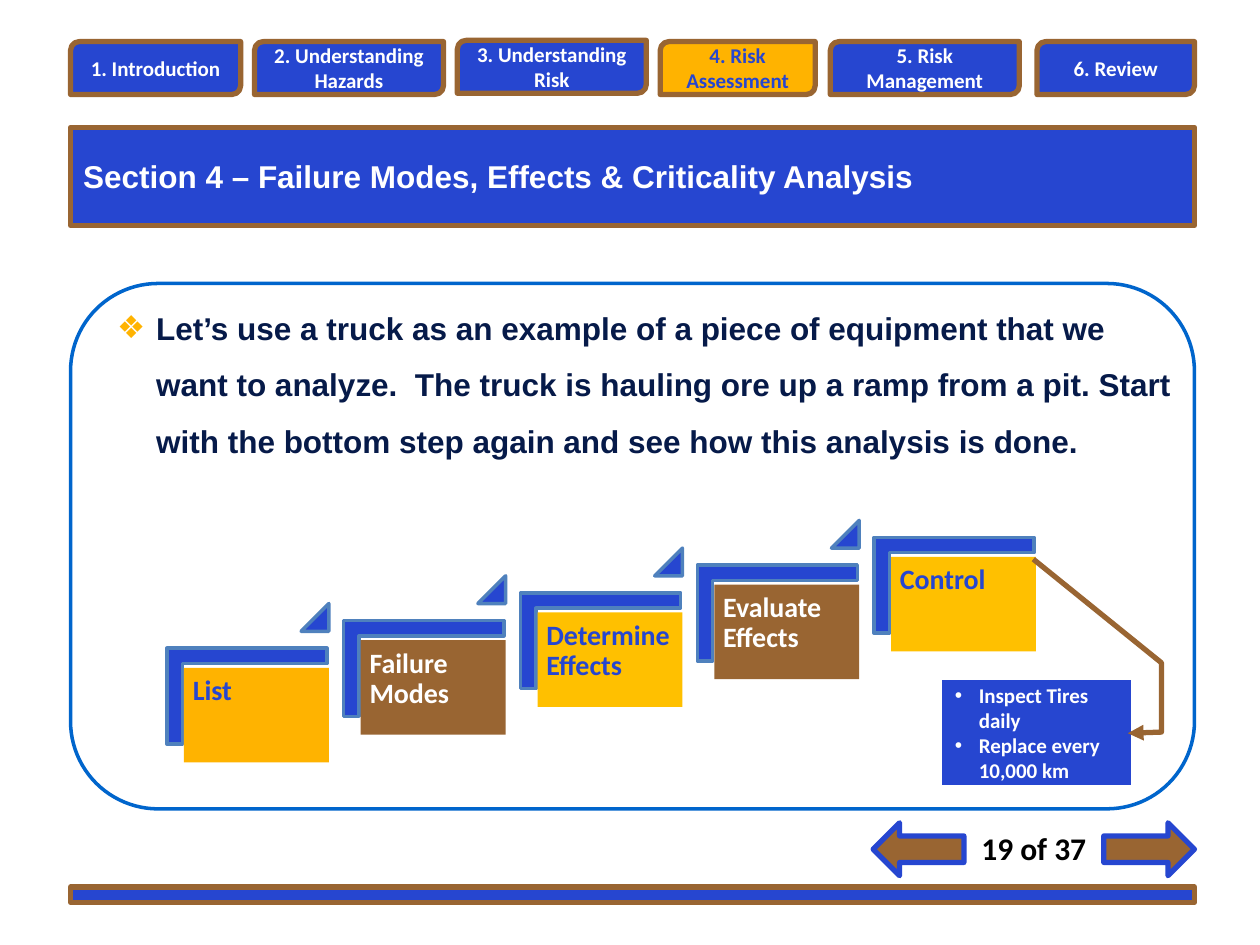
from lxml import etree
from pptx import Presentation
from pptx import util as u
from pptx.dml.color import RGBColor
from pptx.enum import shapes as kinds, text
from pptx.oxml import ns

Inches = u.Inches
Kind = kinds.MSO_SHAPE
Anchor = text.MSO_ANCHOR
Align = text.PP_ALIGN

COLORS = {
    "blue": "2646D0", "brown": "996532", "amber": "FFB300", "gold": "FFC000",
    "edge": "4F81BD", "frame": "0065CC", "navy": "061A49",
    "white": "FFFFFF", "black": "000000",
}
TABS = [  # label, left offset, width, top offset
    ("1. Introduction", 0, 1.35, 0.01),
    ("2. Understanding Hazards", 1.46, 1.5, 0.01),
    ("3. Understanding Risk", 3.07, 1.5, 0),
    ("4. Risk Assessment", 4.68, 1.23, 0.01),
    ("5. Risk Management", 6.03, 1.5, 0.01),
    ("6. Review", 7.67, 1.25, 0.01),
]
CURRENT_TAB = "4. Risk Assessment"
STEPS = [  # label, fill, text colour
    ("List", "amber", "blue"),
    ("Failure Modes", "brown", "white"),
    ("Determine Effects", "gold", "blue"),
    ("Evaluate Effects", "brown", "white"),
    ("Control", "gold", "blue"),
]
ACTIONS = ["Inspect Tires daily", "Replace every 10,000 km"]


def rgb(name):
    return RGBColor.from_string(COLORS[name])


def set_values(target, **values):
    for name, value in values.items():
        setattr(target, name, value)


def place(shape, left, top, width, height):
    set_values(shape, left=Inches(left), top=Inches(top),
               width=Inches(width), height=Inches(height))


def paint(shape, fill=None, line=None, weight=3):
    if fill:
        shape.fill.solid()
        shape.fill.fore_color.rgb = rgb(fill)
    else:
        shape.fill.background()
    if line:
        shape.line.color.rgb = rgb(line)
        shape.line.width = u.Pt(weight)
    else:
        shape.line.fill.background()


def add_block(shapes, kind, box, fill=None, line=None, weight=3, adjustments=()):
    shape = shapes.add_shape(kind, *map(Inches, box))
    shape.shadow.inherit = False
    paint(shape, fill, line, weight)
    for index, value in enumerate(adjustments):
        shape.adjustments[index] = value
    return shape


def write(shape, lines, color, size, font="Calibri", anchor=Anchor.MIDDLE, inset=None, **layout):
    """Fill a shape with bold paragraphs; layout holds paragraph attributes."""
    frame = shape.text_frame
    set_values(frame, text="\n".join(lines), word_wrap=True, vertical_anchor=anchor,
               auto_size=text.MSO_AUTO_SIZE.NONE)
    if inset is not None:
        margin = Inches(inset)
        set_values(frame, margin_left=margin, margin_right=margin,
                   margin_top=margin, margin_bottom=margin)
    for paragraph in frame.paragraphs:
        set_values(paragraph, **layout)
        run_font = paragraph.runs[0].font
        set_values(run_font, name=font, size=u.Pt(size), bold=True)
        run_font.color.rgb = rgb(color)


def add_bullets(shape, character, indent, color):
    for paragraph in shape.text_frame.paragraphs:
        properties = paragraph._p.get_or_add_pPr()
        properties.set("marL", str(Inches(indent)))
        properties.set("indent", str(-Inches(indent)))
        bullet_color = etree.SubElement(properties, ns.qn("a:buClr"))
        etree.SubElement(bullet_color, ns.qn("a:srgbClr"), val=COLORS[color])
        etree.SubElement(properties, ns.qn("a:buFont"), typeface="Arial")
        etree.SubElement(properties, ns.qn("a:buChar"), char=character)


def add_tabs(slide, left, top):
    group = slide.shapes.add_group_shape()
    for label, dx, width, dy in TABS:
        fill, color = ("amber", "blue") if label == CURRENT_TAB else ("blue", "white")
        tab = add_block(group.shapes, Kind.ROUND_2_DIAG_RECTANGLE,
                        (left + dx, top + dy, width, 0.42), fill, "brown")
        write(tab, [label], color, 12, alignment=Align.CENTER)


def set_banner(slide, left, top, width, height):
    title = slide.shapes.title
    place(title, left, top, width, height)
    paint(title, "blue", "brown")
    write(title, ["Section 4 – Failure Modes, Effects & Criticality Analysis"],
          "white", 18, "Arial", alignment=Align.LEFT)


def set_content(slide, left, top, width, height):
    """Rounded frame with the introduction in its upper part."""
    add_block(slide.shapes, Kind.ROUNDED_RECTANGLE, (left, top, width, height),
              line="frame", weight=2)
    body = slide.placeholders[1]
    place(body, left + 0.27, top, width - 0.27, 1.92)
    write(body, ["Let’s use a truck as an example of a piece of equipment that we want to "
                 "analyze.  The truck is hauling ore up a ramp from a pit. Start with the "
                 "bottom step again and see how this analysis is done."],
          "navy", 18, "Arial", Anchor.TOP, line_spacing=1.5, space_before=u.Pt(0))
    add_bullets(body, "❖", 0.31, "amber")


def add_staircase(slide, left, top):
    """Steps that climb to the right; left and top place the lowest tile."""
    group = slide.shapes.add_group_shape()
    for index, (label, fill, color) in enumerate(STEPS):
        x, y = left + 1.403 * index, top - 0.22 * index
        corner = add_block(group.shapes, Kind.CORNER, (x + 0.12, y - 0.41, 0.76, 1.27),
                           "blue", "edge", 2, (0.161, 0.161))
        corner.rotation = 90
        tile = add_block(group.shapes, Kind.RECTANGLE, (x, y, 1.15, 0.75), fill)
        write(tile, [label], color, 16, anchor=Anchor.TOP, inset=0.07,
              alignment=Align.LEFT, line_spacing=0.9)
        if index < len(STEPS) - 1:
            add_block(group.shapes, Kind.ISOSCELES_TRIANGLE, (x + 0.93, y - 0.51, 0.22, 0.22),
                      "blue", "edge", 2, (1,))


def add_action_callout(slide, left, top, width, height):
    callout = add_block(slide.shapes, Kind.LINE_CALLOUT_3_NO_BORDER,
                        (left, top, width, height), "blue", "brown", 3,
                        (0.506, 0.981, 0.495, 1.159, -0.168, 1.159, -1.159, 0.481))
    write(callout, ACTIONS, "white", 12, alignment=Align.LEFT)
    add_bullets(callout, "•", 0.19, "white")
    etree.SubElement(callout.line._get_or_add_ln(), ns.qn("a:headEnd"), type="triangle")


def add_pager(slide, left, top, width):
    arrow_width = 0.72
    for kind, x in ((Kind.LEFT_ARROW, left), (Kind.RIGHT_ARROW, left + width - arrow_width)):
        add_block(slide.shapes, kind, (x, top, arrow_width, 0.42), "brown", "blue")
    label = slide.shapes.add_textbox(*map(Inches, (left + arrow_width, top,
                                                   width - 2 * arrow_width, 0.4)))
    write(label, ["19 of 37"], "black", 18, anchor=Anchor.TOP, alignment=Align.CENTER)


def main():
    presentation = Presentation()
    set_values(presentation, slide_width=Inches(10), slide_height=Inches(7.5))
    slide = presentation.slides.add_slide(presentation.slide_layouts[1])
    left, width = 0.56, 8.92
    set_banner(slide, left, 1.01, width, 0.78)
    set_content(slide, left, 2.25, width, 4.17)
    add_pager(slide, 6.93, 6.53, 2.55)
    add_staircase(slide, 1.46, 5.3)
    add_action_callout(slide, 7.48, 5.4, 1.5, 0.83)
    add_tabs(slide, left, 0.32)
    add_block(slide.shapes, Kind.RECTANGLE, (left, 7.04, width, 0.12), "blue", "brown")
    presentation.save("out.pptx")


if __name__ == "__main__":
    main()
